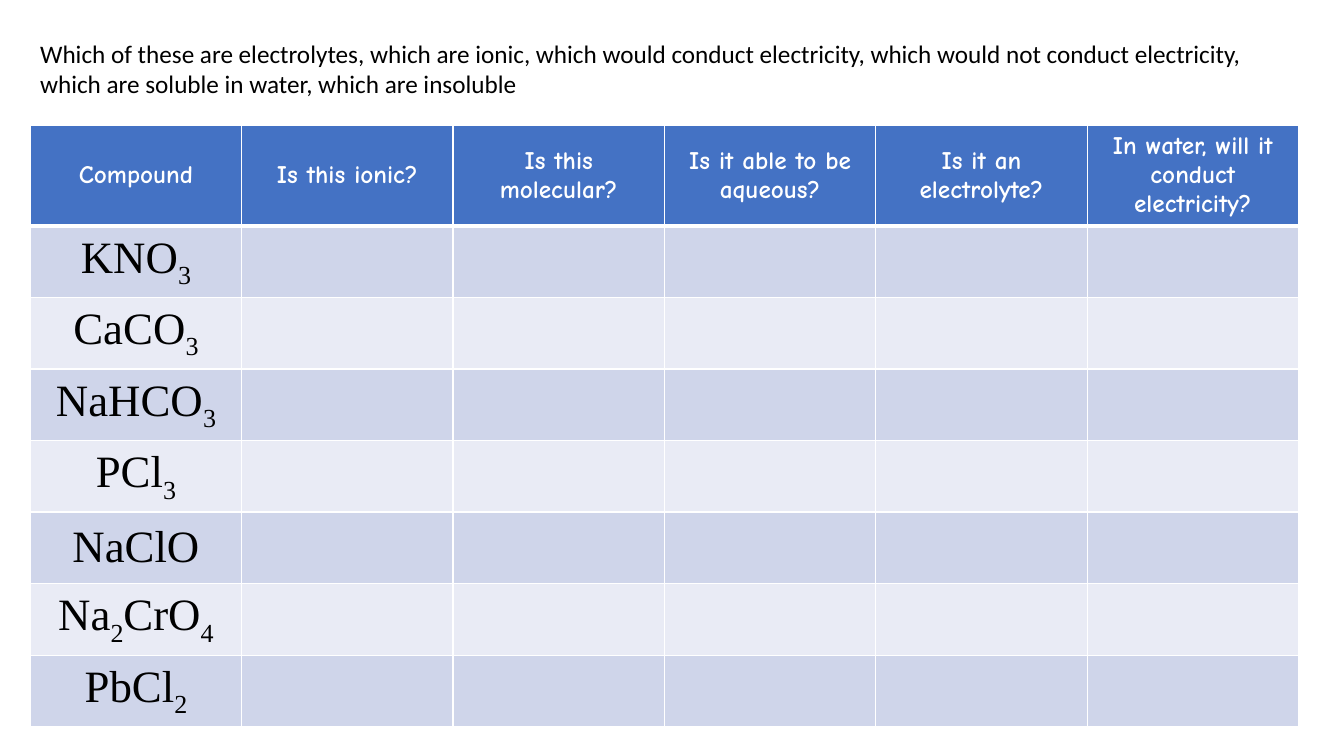
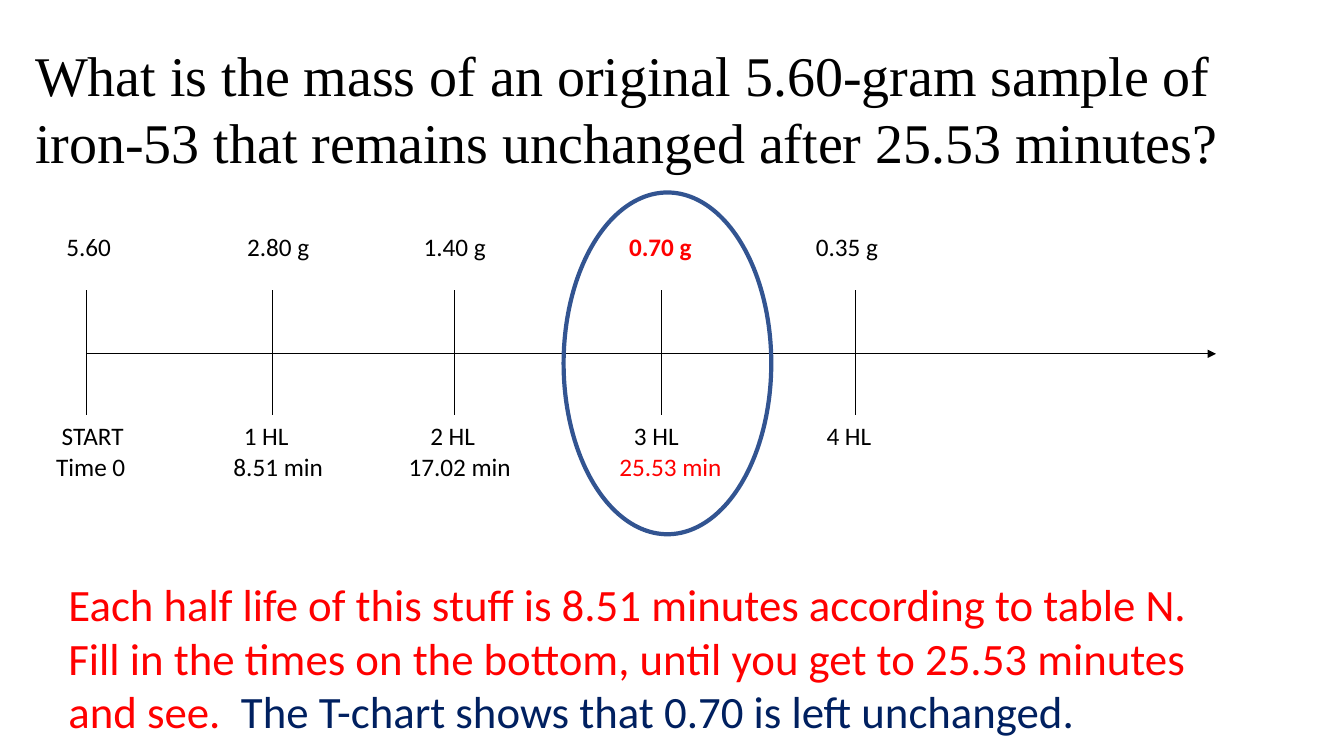
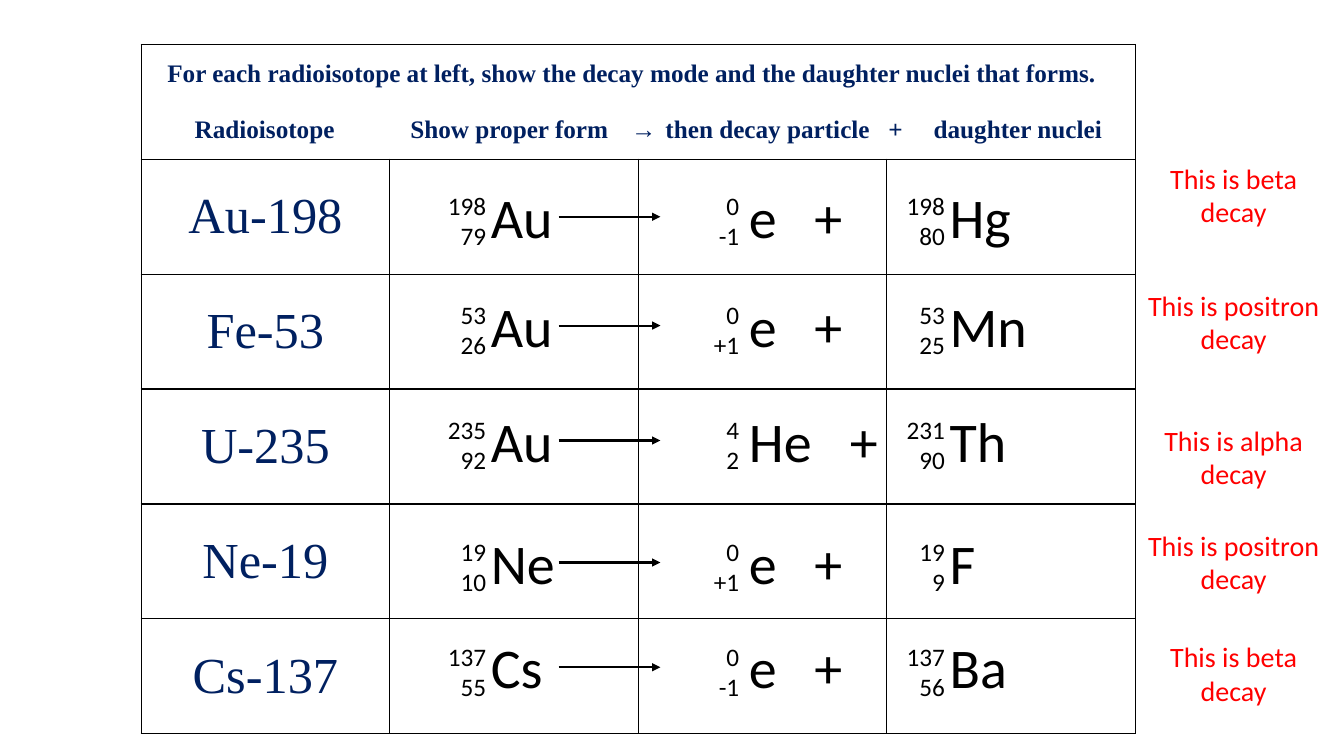
"""Build three chemistry slides: an electrolyte table, a half-life timeline and a decay table."""
from itertools import groupby

from lxml.etree import SubElement
from pptx import Presentation
from pptx.dml.color import RGBColor
from pptx.enum.shapes import MSO_CONNECTOR, MSO_SHAPE
from pptx.enum.text import MSO_ANCHOR, PP_ALIGN
from pptx.oxml.ns import qn
from pptx.util import Inches, Pt

COLORS = {
    "black": "000000",
    "white": "FFFFFF",
    "red": "FF0000",
    "navy": "002060",
    "header": "4472C4",
    "band_dark": "CFD5EA",
    "band_light": "E9EBF5",
    "oval": "325491",
}
SANS, SERIF, COMIC = "Calibri", "Times New Roman", "Comic Neue"

QUESTIONS = ["Compound", "Is this ionic?", "Is this molecular?", "Is it able to be aqueous?",
             "Is it an electrolyte?", "In water, will it conduct electricity?"]
COMPOUNDS = ["KNO3", "CaCO3", "NaHCO3", "PCl3", "NaClO", "Na2CrO4", "PbCl2"]

TICKS = [0.86, 2.7, 4.51, 6.56, 8.48]
TIMELINE_LABELS = [
    (2.25, [("5.60", 0.88), ("2.80 g", 2.76), ("1.40 g", 4.51), ("0.70 g", 6.55), ("0.35 g", 8.4)]),
    (4.12, [("START", 0.92), ("1 HL", 2.64), ("2 HL", 4.49), ("3 HL", 6.51), ("4 HL", 8.42)]),
    (4.43, [("Time 0", 0.9), ("8.51 min", 2.76), ("17.02 min", 4.56), ("25.53 min", 6.65)]),
]

DECAY_HEADINGS = ["Radioisotope", "Show proper form", "→", "then decay particle", "+",
                  "daughter nuclei"]
DECAY_STOPS = [0.43, 2.57, 4.76, 5.1, 7.31, 7.76]
PLUS_LEFT = {"e": 7.98, "He": 8.33}
DECAYS = [
    ("Au-198", 1.76, ("198\n79", "Au"), ("0\n-1", "e"), ("198\n80", "Hg")),
    ("Fe-53", 2.84, ("53\n26", "Au"), ("0\n+1", "e"), ("53\n25", "Mn")),
    ("U-235", 3.98, ("235\n92", "Au"), ("4\n2", "He"), ("231\n90", "Th")),
    ("Ne-19", 5.19, ("19\n10", "Ne"), ("0\n+1", "e"), ("19\n9", "F")),
    ("Cs-137", 6.23, ("137\n55", "Cs"), ("0\n-1", "e"), ("137\n56", "Ba")),
]
DECAY_MODES = [("beta", 1.55), ("positron", 2.81), ("alpha", 4.15), ("positron", 5.19),
               ("beta", 6.3)]


def rgb(name):
    """Return a palette colour."""
    return RGBColor.from_string(COLORS[name])


def format_text(text_frame, size, font=SANS, color="black", bold=False, align=PP_ALIGN.LEFT):
    """Give every run of a text frame the same look."""
    for paragraph in text_frame.paragraphs:
        paragraph.alignment = align
        for run in paragraph.runs:
            run.font.size, run.font.name, run.font.bold = Pt(size), font, bold
            run.font.color.rgb = rgb(color)


def add_text(slide, left, top, width, height, text, size, **look):
    """Add a wrapping text box and return its text frame."""
    box = slide.shapes.add_textbox(Inches(left), Inches(top), Inches(width), Inches(height))
    text_frame = box.text_frame
    text_frame.word_wrap = True
    text_frame.text = text
    format_text(text_frame, size, **look)
    return text_frame


def add_line(slide, start, end, width, arrow=False):
    """Add a black straight line, with an arrowhead at its end on request."""
    points = [Inches(value) for value in (*start, *end)]
    connector = slide.shapes.add_connector(MSO_CONNECTOR.STRAIGHT, *points)
    connector.line.width = Pt(width)
    connector.line.color.rgb = rgb("black")
    if arrow:
        SubElement(connector.line._get_or_add_ln(), qn("a:tailEnd"), type="triangle")
    SubElement(connector._element.spPr, qn("a:effectLst"))


def set_borders(cell, color, top=1, bottom=1):
    """Draw the four borders of a table cell."""
    properties = cell._tc.get_or_add_tcPr()
    for side, width in (("L", 1), ("R", 1), ("T", top), ("B", bottom)):
        border = SubElement(properties, qn(f"a:ln{side}"), w=str(Pt(width)))
        fill = SubElement(border, qn("a:solidFill"))
        SubElement(fill, qn("a:srgbClr"), val=COLORS[color])


def add_grid(slide, left, top, width, columns, heights):
    """Add a table with equal columns and the given row heights."""
    frame = slide.shapes.add_table(len(heights), columns, Inches(left), Inches(top),
                                   Inches(width), Inches(sum(heights)))
    table = frame.table
    for column in table.columns:
        column.width = Inches(width / columns)
    for row, height in zip(table.rows, heights):
        row.height = Inches(height)
    return table


def fill_cell(cell, text, size, **look):
    """Write vertically centred text into a cell."""
    cell.vertical_anchor = MSO_ANCHOR.MIDDLE
    cell.text_frame.text = text
    format_text(cell.text_frame, size, **look)


def fill_formula(cell, formula):
    """Write a chemical formula with its digits as subscripts."""
    fill_cell(cell, "", 32)
    paragraph = cell.text_frame.paragraphs[0]
    for is_digit, letters in groupby(formula, str.isdigit):
        run = paragraph.add_run()
        run.text = "".join(letters)
        if is_digit:
            run._r.get_or_add_rPr().set("baseline", "-25000")
    format_text(cell.text_frame, 32, font=SERIF, align=PP_ALIGN.CENTER)


def set_tab_stops(paragraph, stops):
    """Give a paragraph left tab stops, in inches."""
    tab_list = SubElement(paragraph._p.get_or_add_pPr(), qn("a:tabLst"))
    for stop in stops:
        SubElement(tab_list, qn("a:tab"), pos=str(Inches(stop)), algn="l")


def build_electrolytes(slide):
    """Draw the table of compounds to classify."""
    add_text(slide, 0.3, 0.33, 12.3, 0.71,
             "Which of these are electrolytes, which are ionic, which would conduct electricity, "
             "which would not conduct electricity, which are soluble in water, "
             "which are insoluble", 18)
    table = add_grid(slide, 0.3, 1.24, 12.58, len(QUESTIONS), [0.99] + [0.71] * len(COMPOUNDS))
    for index, row in enumerate(table.rows):
        band = "header" if index == 0 else "band_dark" if index % 2 else "band_light"
        for cell in row.cells:
            set_borders(cell, "white", top=3 if index == 1 else 1, bottom=3 if index == 0 else 1)
            cell.fill.solid()
            cell.fill.fore_color.rgb = rgb(band)
    for column, question in enumerate(QUESTIONS):
        fill_cell(table.cell(0, column), question, 18, font=COMIC, color="white", bold=True,
                  align=PP_ALIGN.CENTER)
    for row, compound in enumerate(COMPOUNDS, 1):
        fill_formula(table.cell(row, 0), compound)


def build_half_lives(slide):
    """Draw the half-life timeline with its answer circled."""
    add_text(slide, 0.25, 0.35, 12.62, 1.5,
             "What is the mass of an original 5.60-gram sample of iron-53 that remains "
             "unchanged after 25.53 minutes?", 40, font=SERIF)
    add_line(slide, (TICKS[0], 3.51), (12.06, 3.51), 0.5, arrow=True)
    for tick in TICKS:
        add_line(slide, (tick, 2.88), (tick, 4.12), 0.5)
    for top, labels in TIMELINE_LABELS:
        for text, center in labels:
            add_text(slide, center - 0.8, top, 1.6, 0.4, text, 18, bold=text == "0.70 g",
                     color="red" if text in ("0.70 g", "25.53 min") else "black",
                     align=PP_ALIGN.CENTER)
    answer = add_text(slide, 0.58, 5.67, 11.88, 1.72,
                      "Each half life of this stuff is 8.51 minutes according to table N.  "
                      "Fill in the times on the bottom, until you get to 25.53 minutes "
                      "and see.  ", 32, color="red")
    conclusion = answer.paragraphs[0].add_run()
    conclusion.text = "The T-chart shows that 0.70 is left unchanged."
    conclusion.font.size, conclusion.font.name = Pt(32), SANS
    conclusion.font.color.rgb = rgb("navy")
    oval = slide.shapes.add_shape(MSO_SHAPE.OVAL, Inches(5.59), Inches(1.91), Inches(2.06),
                                  Inches(3.39))
    oval.shadow.inherit = False
    oval.fill.background()
    oval.line.width = Pt(3)
    oval.line.color.rgb = rgb("oval")


def add_nuclide(slide, left, top, numbers, symbol, symbol_left):
    """Add stacked mass and atomic numbers followed by the symbol."""
    add_text(slide, left, top + 0.08, 0.88, 0.71, numbers, 18, align=PP_ALIGN.RIGHT)
    add_text(slide, symbol_left, top, 1.09, 0.77, symbol, 40)


def build_decays(slide):
    """Draw the table of nuclear decay equations."""
    table = add_grid(slide, 1.4, 0.44, 9.86, 4, [1.14] * (len(DECAYS) + 1))
    for cell in table.iter_cells():
        set_borders(cell, "black")
        cell.fill.background()
    heading = table.cell(0, 0)
    heading.merge(table.cell(0, 3))
    lines = ["For each radioisotope at left, show the decay mode and the daughter nuclei "
             "that forms."], DECAY_HEADINGS
    fill_cell(heading, "\n".join("\t" + "\t".join(line) for line in lines), 18, font=SERIF,
              color="navy", bold=True)
    instruction, headings = heading.text_frame.paragraphs
    headings.space_before = Pt(20)
    set_tab_stops(instruction, [0.16])
    set_tab_stops(headings, DECAY_STOPS)
    for row, (isotope, top, parent, particle, daughter) in enumerate(DECAYS, 1):
        fill_cell(table.cell(row, 0), isotope, 36, font=SERIF, color="navy",
                  align=PP_ALIGN.CENTER)
        add_nuclide(slide, 4.04, top, *parent, 4.77)
        add_line(slide, (5.54, top + 0.39), (6.55, top + 0.39), 1.5, arrow=True)
        add_nuclide(slide, 6.55, top, *particle, 7.33)
        add_text(slide, PLUS_LEFT[particle[1]], top, 0.6, 0.77, "+", 40)
        add_nuclide(slide, 8.59, top, *daughter, 9.32)
    for mode, top in DECAY_MODES:
        add_text(slide, 11.14, top, 2.19, 0.77, f"This is {mode}\ndecay", 20, color="red",
                 align=PP_ALIGN.CENTER)


def main():
    """Build and save the presentation."""
    presentation = Presentation()
    presentation.slide_width, presentation.slide_height = Inches(13.33), Inches(7.5)
    for build in (build_electrolytes, build_half_lives, build_decays):
        build(presentation.slides.add_slide(presentation.slide_layouts[6]))
    presentation.save("out.pptx")


if __name__ == "__main__":
    main()
